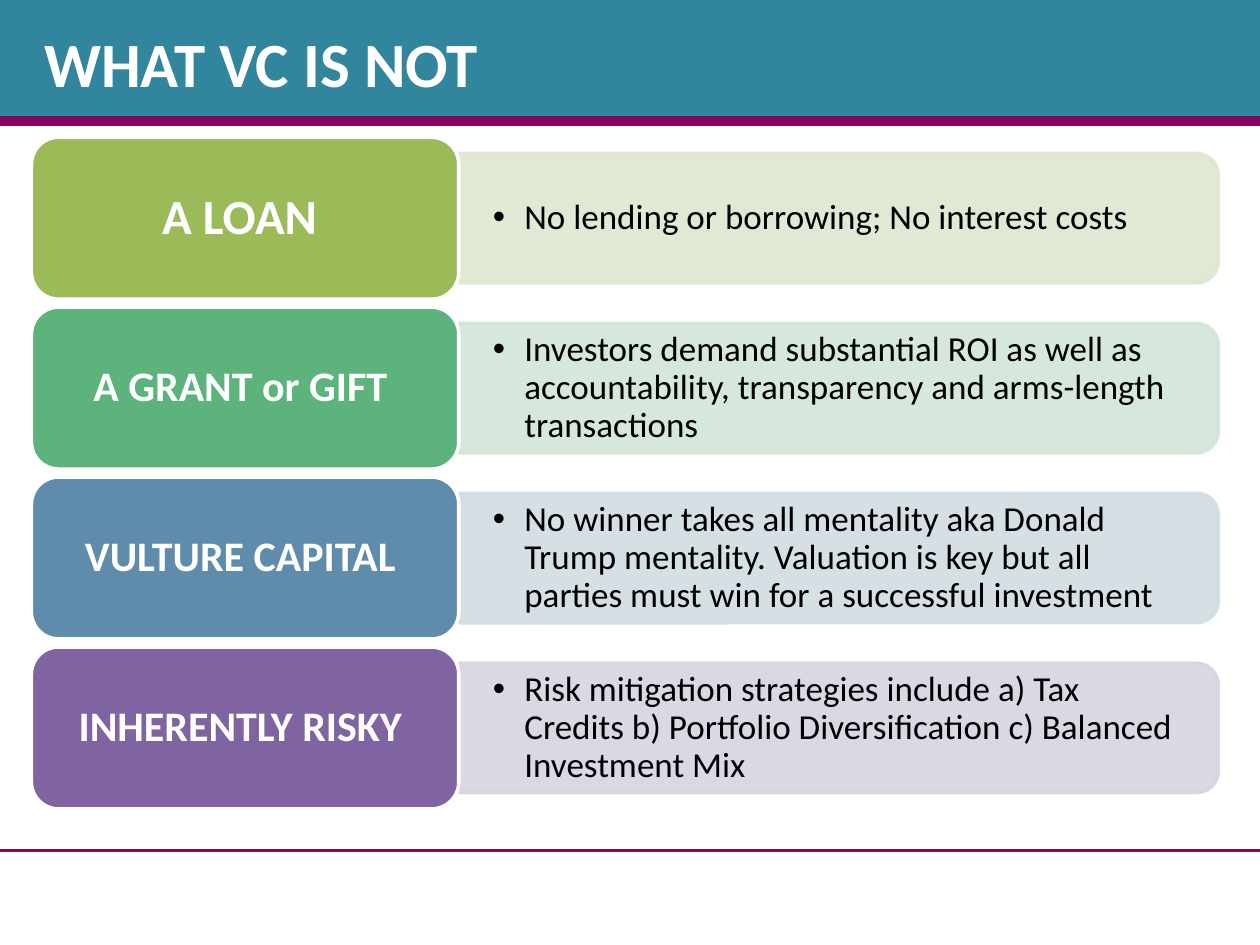
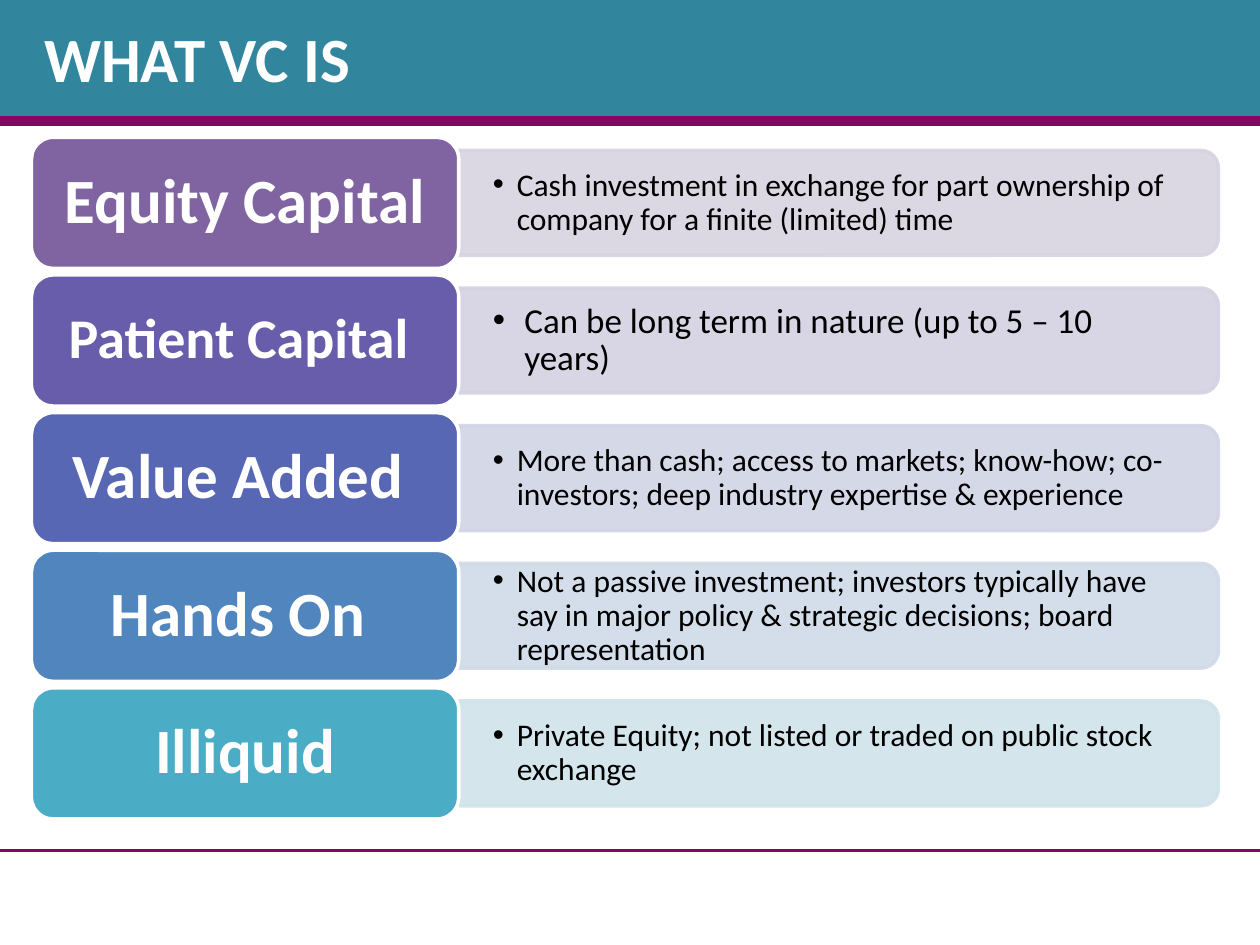
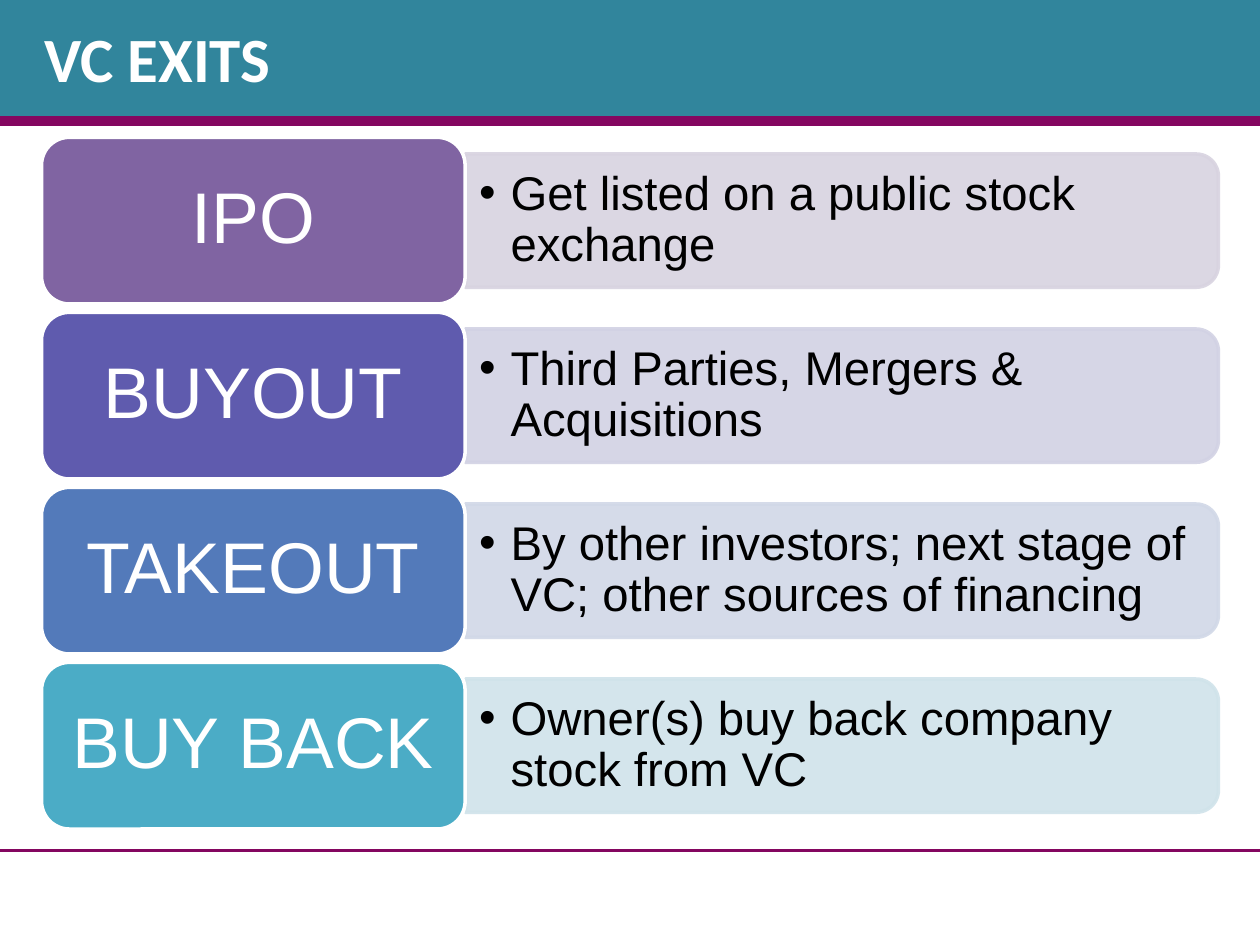
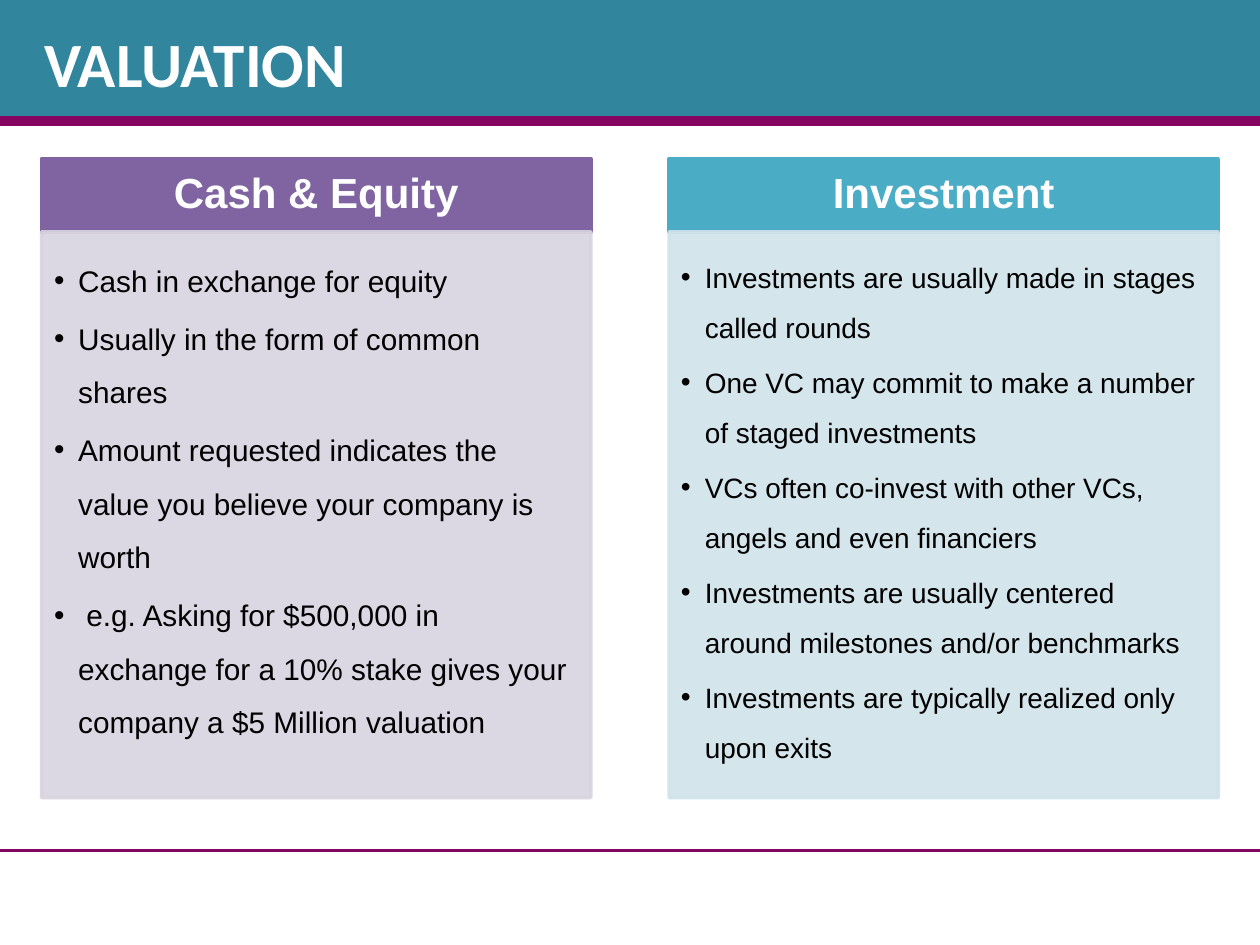
"""Build four slides on venture capital: what it is and is not, exits and valuation."""
import lxml.etree
import pptx
import pptx.dml.color
import pptx.enum.shapes
import pptx.enum.text
import pptx.oxml.ns
import pptx.util

SHAPE = pptx.enum.shapes.MSO_SHAPE
ANCHOR = pptx.enum.text.MSO_ANCHOR
ALIGN = pptx.enum.text.PP_ALIGN
In, Pt = pptx.util.Inches, pptx.util.Pt
qn = pptx.oxml.ns.qn

W, H = 10, 7.5
TOP, RIGHT = 1.09, 9.67
LABEL_SHARE, GAP_SHARE, BAR_SHARE, CORNER = 0.36, 0.05, 0.8, 0.05
TITLE_LAYOUT, COMPARISON_LAYOUT = 5, 4

COLORS = {
    "band": "31859C", "rule": "840660", "white": "FFFFFF", "black": "000000",
    "olive": "9BBB59", "olive_pale": "DEE7D1",
    "green": "5CB37C", "green_pale": "D2E5D9",
    "steel": "608CAB", "steel_pale": "D2DCE2",
    "purple": "8064A2", "purple_pale": "D8D3E0",
    "violet": "685DAB", "violet_pale": "D4D2E3",
    "indigo": "5767B4", "indigo_pale": "D1D4E5",
    "blue": "5185BD", "blue_pale": "D0DBE8",
    "iris": "5F5BAE", "iris_pale": "D2D2E4",
    "azure": "537ABA", "azure_pale": "D1D8E7",
    "aqua": "4BACC6", "aqua_pale": "D0E3EA",
}

ROW_SLIDES = [
    {"title": "WHAT VC IS NOT", "title_height": 0.83, "left": 0.25, "height": 5.33,
     "font": "Calibri", "bold": True, "insets": (0.27, 0.14), "rows": [
         ("A LOAN ", 28, "olive", 20, "No lending or borrowing; No interest costs"),
         ("A GRANT or GIFT ", 24, "green", 20,
          "Investors demand substantial ROI as well as accountability, "
          "transparency and arms-length transactions"),
         ("VULTURE CAPITAL ", 24, "steel", 20,
          "No winner takes all mentality aka Donald Trump mentality. "
          "Valuation is key but all parties must win for a successful investment"),
         ("INHERENTLY RISKY ", 24, "purple", 20,
          "Risk mitigation strategies include a) Tax Credits "
          "b) Portfolio Diversification c) Balanced Investment Mix"),
     ]},
    {"title": "WHAT VC IS", "title_height": 0.75, "left": 0.25, "height": 5.41,
     "font": "Calibri", "bold": True, "insets": (0.27, 0.14), "rows": [
         ("Equity Capital", 36, "purple", 18,
          "Cash investment in exchange for part ownership of company "
          "for a finite (limited) time"),
         ("Patient Capital ", 32, "violet", 20,
          "Can be long term in nature (up to 5 – 10 years)"),
         ("Value Added ", 36, "indigo", 18,
          "More than cash; access to markets; know-how; co-investors; "
          "deep industry expertise & experience"),
         ("Hands On ", 36, "blue", 18,
          "Not a passive investment; investors typically have say in major "
          "policy & strategic decisions; board representation"),
         ("Illiquid", 36, "aqua", 18,
          "Private Equity; not listed or traded on public stock exchange"),
     ]},
    {"title": "VC EXITS", "title_height": 0.75, "left": 0.33, "height": 5.49,
     "font": "Arial", "bold": False, "insets": (0.11, 0.06), "rows": [
         ("IPO", 41, "purple", 27, "Get listed on a public stock exchange"),
         ("BUYOUT", 41, "iris", 27, "Third Parties, Mergers & Acquisitions"),
         ("TAKEOUT", 41, "azure", 27,
          "By other investors; next stage of VC; other sources of financing"),
         ("BUY BACK", 41, "aqua", 27, "Owner(s) buy back company stock from VC"),
     ]},
]

VALUATION = {"title": "VALUATION", "title_height": 0.83, "columns": [
    ("Cash & Equity", "purple", 17, [
        "Cash in exchange for equity",
        "Usually in the form of common shares",
        "Amount requested indicates the value you believe your company is worth",
        " e.g. Asking for $500,000 in exchange for a 10% stake gives your company "
        "a $5 Million valuation",
    ]),
    ("Investment", "aqua", 16, [
        "Investments are usually made in stages called rounds",
        "One VC may commit to make a number of staged investments",
        "VCs often co-invest with other VCs, angels and even financiers",
        "Investments are usually centered around milestones and/or benchmarks",
        "Investments are typically realized only upon exits",
    ]),
]}


def rgb(name):
    return pptx.dml.color.RGBColor.from_string(COLORS[name])


def place(sp, x, y, w, h):
    sp.left, sp.top, sp.width, sp.height = In(x), In(y), In(w), In(h)


def paint(sp, fill, line=None, alpha=None):
    sp.shadow.inherit = False
    sp.fill.solid()
    sp.fill.fore_color.rgb = rgb(fill)
    if line:
        sp.line.color.rgb = rgb(line)
        sp.line.width = Pt(2)
    else:
        sp.line.fill.background()
    if alpha:
        for clr in sp.element.spPr.iter(qn("a:srgbClr")):
            lxml.etree.SubElement(clr, qn("a:alpha"), val=str(alpha * 1000))


def write(sp, lines, size, font, color, bold=False, align=ALIGN.LEFT, anchor=ANCHOR.MIDDLE,
          insets=(0.1, 0.05, 0.1, 0.05), spacing=0.9, after=0.0, indent=None):
    tf = sp.text_frame
    tf.text = "\n".join(lines)
    tf.word_wrap = True
    tf.auto_size = pptx.enum.text.MSO_AUTO_SIZE.NONE
    tf.vertical_anchor = anchor
    tf.margin_left, tf.margin_top, tf.margin_right, tf.margin_bottom = map(In, insets)
    for p in tf.paragraphs:
        p.alignment = align
        p.line_spacing = spacing
        p.space_before = Pt(0)
        p.space_after = Pt(round(size * after, 1))
        if indent:
            pPr = p._p.get_or_add_pPr()
            pPr.set("marL", str(In(indent)))
            pPr.set("indent", str(-In(indent)))
            lxml.etree.SubElement(pPr, qn("a:buFont"), typeface="Arial")
            lxml.etree.SubElement(pPr, qn("a:buChar"), char="•")
        for r in p.runs:
            r.font.size, r.font.name, r.font.bold = Pt(size), font, bold
            r.font.color.rgb = rgb(color)


def add_master_bands(prs, slide):
    """Draw the shared bands and move them to the master."""
    bands = []
    for y, color in ((0.08, "rule"), (0, "band")):
        sp = slide.shapes.add_shape(SHAPE.RECTANGLE, 0, In(y), In(W), In(0.92))
        paint(sp, color)
        bands.append(sp)
    rule = slide.shapes.add_connector(
        pptx.enum.shapes.MSO_CONNECTOR.STRAIGHT, In(W), In(0.9 * H), 0, In(0.9 * H))
    rule.line.color.rgb = rgb("rule")
    rule.line.width = Pt(2.25)
    lxml.etree.SubElement(rule.element.spPr, qn("a:effectLst"))
    for i, sp in enumerate(bands + [rule]):
        sp.element.xpath(".//p:cNvPr")[0].set("id", str(20 + i))
        prs.slide_master.shapes.element.insert(2 + i, sp.element)


def add_slide(prs, layout, content):
    slide = prs.slides.add_slide(prs.slide_layouts[layout])
    title = slide.shapes.title
    place(title, 0.25, 0.08, 9.5, content["title_height"])
    write(title, [content["title"]], 36, "Calibri", "white", bold=True, spacing=1.0)
    return slide


def add_rows(slide, content):
    """Stack label boxes, each with a bar of detail to its right."""
    rows, left, font = content["rows"], content["left"], content["font"]
    n = len(rows)
    row_h = content["height"] / (n + GAP_SHARE * (n - 1))
    label_w = LABEL_SHARE * (RIGHT - left)
    bar_x, bar_w, bar_h = left + label_w, RIGHT - left - label_w, BAR_SHARE * row_h
    pad = CORNER * bar_h
    for i, (label, label_size, color, size, detail) in enumerate(rows):
        y = TOP + i * row_h * (1 + GAP_SHARE)
        mid = y + row_h / 2

        bar = slide.shapes.add_shape(
            SHAPE.ROUND_2_SAME_RECTANGLE, In(bar_x + (bar_w - bar_h) / 2),
            In(mid - bar_w / 2), In(bar_h), In(bar_w))
        bar.rotation = 90
        paint(bar, color + "_pale", color + "_pale", alpha=90)

        box = slide.shapes.add_textbox(
            In(bar_x), In(mid - bar_h / 2 + pad), In(bar_w - pad), In(bar_h - 2 * pad))
        write(box, [detail], size, font, "black", insets=content["insets"] * 2,
              after=0.15, indent=0.19 if size == 18 else 0.25)

        sp = slide.shapes.add_shape(
            SHAPE.ROUNDED_RECTANGLE, In(left), In(y), In(label_w), In(row_h))
        paint(sp, color, "white")
        inset = label_size / 240
        write(sp, [label], label_size, font, "white", bold=content["bold"],
              align=ALIGN.CENTER, insets=(inset, inset / 2) * 2, after=0.35)


def add_columns(slide, columns):
    """Fill the comparison placeholders with headed lists."""
    x0, y, w, head_h, body_h = 0.33, 1.26, 4.36, 0.58, 4.49
    pitch = RIGHT - w - x0
    for i, (heading, color, size, items) in enumerate(columns):
        x = x0 + i * pitch
        head, body = (slide.placeholders[2 * i + k] for k in (1, 2))
        place(head, x, y, w, head_h)
        paint(head, color, color)
        write(head, [heading], 24, "Arial", "white", bold=True, align=ALIGN.CENTER,
              insets=(0.19, 0.11) * 2, after=0.35)

        place(body, x, y + head_h, w, body_h)
        paint(body, color + "_pale", color + "_pale", alpha=90)
        unit = size / 170
        write(body, items, size, "Arial", "black", anchor=ANCHOR.TOP,
              insets=(unit, unit, 1.33 * unit, 1.5 * unit), spacing=1.5,
              after=0.15, indent=0.19)


def main():
    prs = pptx.Presentation()
    prs.slide_width, prs.slide_height = In(W), In(H)
    for content in ROW_SLIDES:
        add_rows(add_slide(prs, TITLE_LAYOUT, content), content)
    add_columns(add_slide(prs, COMPARISON_LAYOUT, VALUATION), VALUATION["columns"])
    add_master_bands(prs, prs.slides[0])
    prs.save("out.pptx")


if __name__ == "__main__":
    main()
